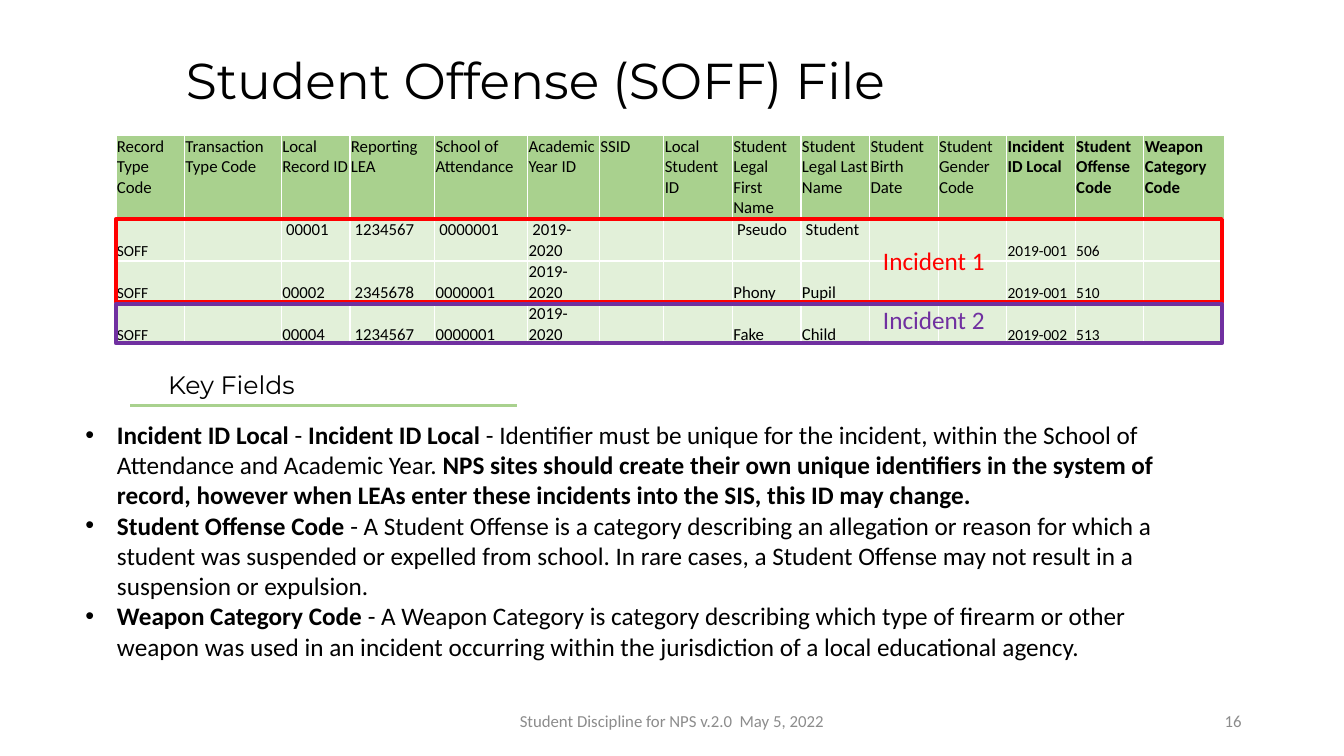
from dataclasses import dataclass

from lxml import etree
from pptx import Presentation
from pptx.dml.color import RGBColor
from pptx.enum.shapes import MSO_CONNECTOR, MSO_SHAPE
from pptx.enum.text import MSO_ANCHOR, PP_ALIGN
from pptx.oxml.ns import qn
from pptx.util import Pt

TOP, MIDDLE, BOTTOM = MSO_ANCHOR.TOP, MSO_ANCHOR.MIDDLE, MSO_ANCHOR.BOTTOM
LEFT, CENTER, RIGHT = PP_ALIGN.LEFT, PP_ALIGN.CENTER, PP_ALIGN.RIGHT
STRAIGHT, RECTANGLE = MSO_CONNECTOR.STRAIGHT, MSO_SHAPE.RECTANGLE


@dataclass(frozen=True)
class Theme:
    head_font: str = "Montserrat"
    body_font: str = "Calibri"
    title: int = 36
    body: int = 18
    small: int = 12
    tiny: int = 11
    black: str = "000000"
    white: str = "FFFFFF"
    gray: str = "8C8C8C"
    green: str = "A9D18E"
    pale: str = "E2F0D9"
    red: str = "FF0000"
    purple: str = "7030A0"


T = Theme()

COL_WIDTHS = [49, 69.2, 49, 60.5, 66.5, 51.3, 46, 49, 49, 49, 49, 49, 49, 49, 57.5]
HEADER_HEIGHT, ROW_HEIGHT = 59.8, 29.5
FIRST_KEY_COL = 12
TINY_COLS = (0, 12, 13)
HEADERS = [
    "Record Type Code", "Transaction Type Code", "Local Record ID", "Reporting LEA",
    "School of Attendance", "Academic Year ID", "SSID", "Local Student ID",
    "Student Legal First Name", "Student Legal Last Name", "Student Birth Date",
    "Student Gender Code", "Incident ID Local", "Student Offense Code",
    "Weapon Category Code",
]
RECORDS = [
    ["SOFF", "", " 00001", " 1234567", " 0000001", " 2019-2020", "", "",
     " Pseudo", " Student", "", "", "2019-001", "506", ""],
    ["SOFF", "", "00002", " 2345678", "0000001", "2019-2020", "", "",
     "Phony", "Pupil", "", "", "2019-001", "510", ""],
    ["SOFF", "", "00004", " 1234567", "0000001", "2019-2020", "", "",
     "Fake", "Child", "", "", "2019-002", "513", ""],
]
KEY_FIELDS = [
    [("Incident ID Local ", True), ("- ", False), ("Incident ID Local ", True),
     ("- Identifier must be unique for the incident, within the School of "
      "Attendance and Academic Year. ", False),
     ("NPS sites should create their own unique identifiers in the system of record, "
      "however when LEAs enter these incidents into the SIS, this ID may change.", True)],
    [("Student Offense Code ", True),
     ("- A Student Offense is a category describing an allegation or reason for which a "
      "student was suspended or expelled from school. In rare cases, a Student Offense "
      "may not result in a suspension or expulsion.", False)],
    [("Weapon Category Code ", True),
     ("- A Weapon Category is category describing which type of firearm or other weapon "
      "was used in an incident occurring within the jurisdiction of a local educational "
      "agency.", False)],
]


def style(p, size, color, font=T.body_font, bold=False, align=LEFT):
    p.alignment = align
    p.font.size, p.font.name, p.font.bold = Pt(size), font, bold
    p.font.color.rgb = RGBColor.from_string(color)


def add_text(shapes, box, text, size, color, font=T.body_font, align=LEFT, anchor=TOP):
    tf = shapes.add_textbox(*map(Pt, box)).text_frame
    tf.word_wrap = True
    tf.vertical_anchor = anchor
    p = tf.paragraphs[0]
    p.text = text
    style(p, size, color, font, align=align)


def add_title(s, box, text):
    title = s.shapes.title
    title.left, title.top, title.width, title.height = map(Pt, box)
    title.text_frame.vertical_anchor = MIDDLE
    p = title.text_frame.paragraphs[0]
    p.text = text
    p.line_spacing = 0.9
    style(p, T.title, T.black, T.head_font)


def add_borders(cell):
    tcPr = cell._tc.get_or_add_tcPr()
    for i, side in enumerate(("a:lnL", "a:lnR", "a:lnT", "a:lnB")):
        ln = etree.Element(qn(side), w=str(Pt(1)))
        fill = etree.SubElement(ln, qn("a:solidFill"))
        etree.SubElement(fill, qn("a:srgbClr"), val=T.white)
        tcPr.insert(i, ln)


def fill_cell(cell, text, size, fill, bold, anchor):
    cell.margin_left = cell.margin_right = cell.margin_top = Pt(0.7)
    cell.margin_bottom = 0
    cell.vertical_anchor = anchor
    cell.fill.solid()
    cell.fill.fore_color.rgb = RGBColor.from_string(fill)
    p = cell.text_frame.paragraphs[0]
    p.text = text
    style(p, size, T.black, bold=bold)
    add_borders(cell)


def add_offense_table(s, left, top):
    rows = [HEADERS] + RECORDS
    heights = [HEADER_HEIGHT] + [ROW_HEIGHT] * len(RECORDS)
    frame = s.shapes.add_table(len(rows), len(HEADERS), Pt(left), Pt(top),
                               Pt(sum(COL_WIDTHS)), Pt(sum(heights)))
    table = frame.table
    table.first_row = table.horz_banding = False
    for col, width in zip(table.columns, COL_WIDTHS):
        col.width = Pt(width)
    for r, (row, height) in enumerate(zip(rows, heights)):
        table.rows[r].height = Pt(height)
        for c, text in enumerate(row):
            tiny = r > 0 and c in TINY_COLS
            fill_cell(table.cell(r, c), text,
                      T.tiny if tiny else T.small,
                      T.pale if r else T.green,
                      r == 0 and c >= FIRST_KEY_COL,
                      BOTTOM if tiny or r > 1 else TOP)


def add_incident(s, box, label, label_top, color):
    left, top, width, height = box
    frame = s.shapes.add_shape(RECTANGLE, *map(Pt, box))
    frame.shadow.inherit = False
    frame.fill.background()
    frame.line.color.rgb = RGBColor.from_string(color)
    frame.line.width = Pt(3)
    add_text(s.shapes, (left + 537, label_top, 94.5, 28), label, T.body, color,
             align=CENTER, anchor=MIDDLE)


def add_section_heading(s, box, text):
    left, top, width, height = box
    group = s.shapes.add_group_shape()
    add_text(group.shapes, (left + 20, top, width - 20, height), text,
             T.body, T.black, T.head_font)
    y = top + height + 0.5
    rule = group.shapes.add_connector(STRAIGHT, Pt(left), Pt(y), Pt(left + 276), Pt(y))
    rule.line.color.rgb = RGBColor.from_string(T.green)
    rule.line.width = Pt(2.25)
    etree.SubElement(rule._element.spPr, qn("a:effectLst"))


def add_key_fields(s, box):
    tf = s.shapes.add_textbox(*map(Pt, box)).text_frame
    tf.word_wrap = True
    for i, parts in enumerate(KEY_FIELDS):
        p = tf.add_paragraph() if i else tf.paragraphs[0]
        style(p, T.body, T.black)
        pPr = p._p.get_or_add_pPr()
        pPr.set("marL", str(Pt(22.5)))
        pPr.set("indent", str(-Pt(22.5)))
        bullet = etree.Element(qn("a:buChar"), char="•")
        font = etree.Element(qn("a:buFont"), typeface="Arial")
        pPr.insert(0, font)
        pPr.insert(1, bullet)
        for text, bold in parts:
            r = p.add_run()
            r.text = text
            r.font.bold = bold


def add_footer(s, top, text, number):
    add_text(s.shapes, (318, top, 324, 29), text, T.small, T.gray,
             align=CENTER, anchor=MIDDLE)
    add_text(s.shapes, (678, top, 216, 29), number, T.small, T.gray,
             align=RIGHT, anchor=MIDDLE)


def main():
    prs = Presentation()
    prs.slide_width, prs.slide_height = Pt(960), Pt(540)
    s = prs.slides.add_slide(prs.slide_layouts[5])
    add_title(s, (125.5, 22.5, 571.5, 74), "Student Offense (SOFF) File")
    add_offense_table(s, 82.8, 96.7)
    add_key_fields(s, (54, 296, 780.5, 269))
    add_section_heading(s, (93, 260, 450.5, 29), "Key Fields")
    add_footer(s, 500.5, "Student Discipline for NPS v.2.0  May 5, 2022", "16")
    add_incident(s, (82.8, 156.5, 790, 59.5), "Incident 1", 172, T.red)
    add_incident(s, (82.8, 217.2, 790, 28), "Incident 2", 214.5, T.purple)
    prs.save("out.pptx")


if __name__ == "__main__":
    main()
